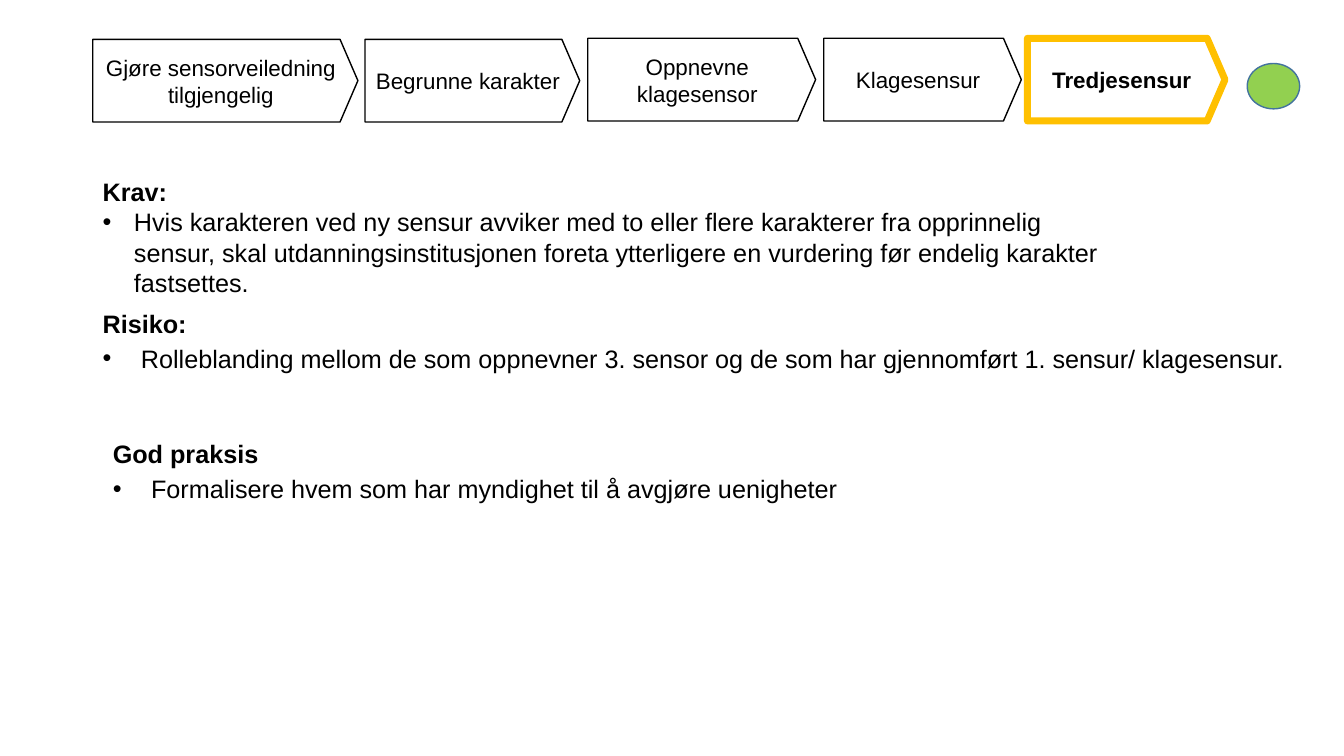
import pptx
import pptx.util
import pptx.dml.color
import pptx.enum.shapes
import pptx.enum.text
import lxml.etree
from pptx.util import Inches

BLACK = pptx.dml.color.RGBColor(0x00, 0x00, 0x00)
WHITE = pptx.dml.color.RGBColor(0xFF, 0xFF, 0xFF)
AMBER = pptx.dml.color.RGBColor(0xFF, 0xC0, 0x00)
GREEN = pptx.dml.color.RGBColor(0x92, 0xD0, 0x50)
BLUE = pptx.dml.color.RGBColor(0x43, 0x73, 0x9E)

STEPS = [
    ("Gjøre sensorveiledning tilgjengelig", 0, 0.01, 2.63),
    ("Begrunne karakter", 2.7, 0.01, 2.13),
    ("Oppnevne klagesensor", 4.91, 0, 2.26),
    ("Klagesensur", 7.25, 0, 1.96),
    ("Tredjesensur", 9.27, 0, 1.96),
]
CURRENT_STEP = "Tredjesensur"

SECTIONS = [
    ("Krav:",
     "Hvis karakteren ved ny sensur avviker med to eller flere karakterer fra opprinnelig "
     "sensur, skal utdanningsinstitusjonen foreta ytterligere en vurdering før endelig "
     "karakter fastsettes.",
     (0.92, 1.7, 10.25, 1.31), 0.31, 1.0),
    ("Risiko:",
     "Rolleblanding mellom de som oppnevner 3. sensor og de som har gjennomført 1. sensur/ "
     "klagesensur.",
     (0.92, 3.01, 11.97, 1.29), 0.38, 1.15),
    ("God praksis",
     "Formalisere hvem som har myndighet til å avgjøre uenigheter",
     (1.02, 4.3, 12.09, 1.99), 0.38, 1.15),
]


def write_text(para, text, size=18, bold=False, align=None, spacing=None, indent=None):
    """Write one formatted paragraph, bulleted when an indent is given."""
    if indent is not None:
        properties = para._p.get_or_add_pPr()
        properties.set("marL", str(Inches(indent)))
        properties.set("indent", str(-Inches(indent)))
        namespace = properties.nsmap["a"]
        bullet_font = lxml.etree.SubElement(properties, f"{{{namespace}}}buFont")
        bullet_font.set("typeface", "Arial")
        bullet = lxml.etree.SubElement(properties, f"{{{namespace}}}buChar")
        bullet.set("char", "•")
    if align is not None:
        para.alignment = align
    if spacing is not None:
        para.line_spacing = spacing
    span = para.add_run()
    span.text = text
    span.font.name = "Arial"
    span.font.size = pptx.util.Pt(size)
    span.font.bold = bold
    span.font.color.rgb = BLACK


def add_figure(page, kind, box, fill, line, weight=1):
    """Add a filled and outlined preset shape in the given box."""
    shape = page.shapes.add_shape(kind, *(Inches(length) for length in box))
    shape.shadow.inherit = False
    shape.fill.solid()
    shape.fill.fore_color.rgb = fill
    shape.line.color.rgb = line
    shape.line.width = pptx.util.Pt(weight)
    return shape


def add_process(page, box):
    """Draw the process arrows and highlight the current step."""
    left, top, width, height = box
    for label, across, down, length in STEPS:
        current = label == CURRENT_STEP
        arrow = add_figure(page, pptx.enum.shapes.MSO_SHAPE.PENTAGON,
                           (left + across, top + down, length, height), WHITE,
                           AMBER if current else BLACK, 5 if current else 1)
        arrow.adjustments[0] = 0.216
        frame = arrow.text_frame
        frame.word_wrap = True
        frame.vertical_anchor = pptx.enum.text.MSO_ANCHOR.MIDDLE
        write_text(frame.paragraphs[0], label, size=16, bold=current,
                   align=pptx.enum.text.PP_ALIGN.CENTER)
    add_figure(page, pptx.enum.shapes.MSO_SHAPE.OVAL,
               (left + width - 0.52, top + 0.25, 0.52, 0.45), GREEN, BLUE)


def add_section(page, box, heading, point, indent, spacing):
    """Write a bold heading with one bullet point below it."""
    frame = page.shapes.add_textbox(*(Inches(length) for length in box)).text_frame
    frame.word_wrap = True
    write_text(frame.paragraphs[0], heading, bold=True)
    write_text(frame.add_paragraph(), point, spacing=spacing, indent=indent)


def main():
    """Build and save the slide."""
    deck = pptx.Presentation()
    deck.slide_width = Inches(13.33)
    deck.slide_height = Inches(7.5)
    page = deck.slides.add_slide(deck.slide_layouts[6])
    add_process(page, (0.92, 0.38, 11.97, 0.82))
    for heading, point, box, indent, spacing in SECTIONS:
        add_section(page, box, heading, point, indent, spacing)
    deck.save("out.pptx")


if __name__ == "__main__":
    main()
